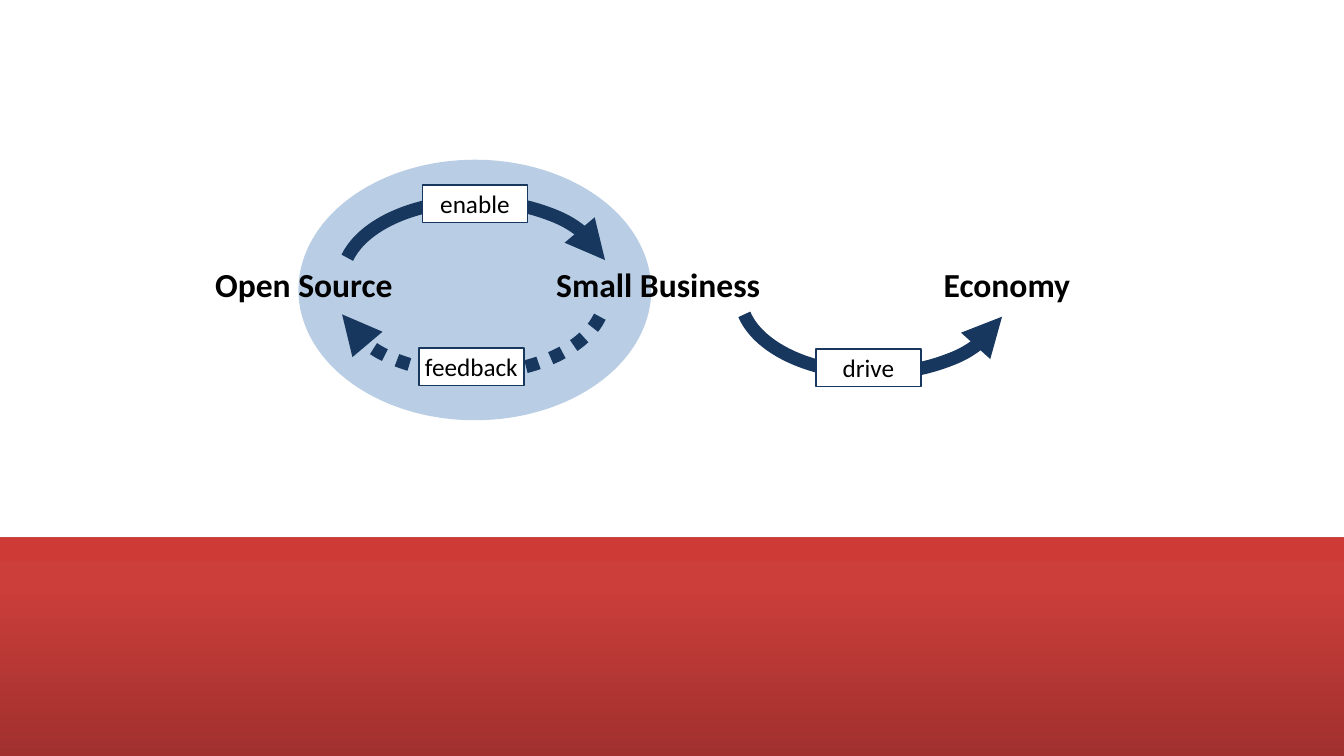
import copy
from dataclasses import dataclass
from typing import Optional

import pptx
import pptx.dml.color
import pptx.enum.dml
import pptx.enum.shapes
import pptx.enum.text
import pptx.oxml.ns
import pptx.oxml.xmlchemy
import pptx.util
from pptx.util import Cm

SHAPES = pptx.enum.shapes.MSO_SHAPE
ALIGN = pptx.enum.text.PP_ALIGN
NAVY, WHITE, BLACK = "17375E", "FFFFFF", "000000"
ARC_SIZE = (13.44, 7.85)
TAG_SIZE = (5.29, 1.9)


@dataclass
class Label:
    text: str
    left: float
    width: float
    align: ALIGN


@dataclass
class Flow:
    """A curved arrow with its tag; positions in centimetres."""
    text: str
    arc: tuple[float, float]
    tag: tuple[float, float]
    arrow_end: str = "tailEnd"
    rotation: float = 0
    dash: Optional[pptx.enum.dml.MSO_LINE] = None


LABELS = [
    Label("Open Source", 10.59, 13.34, ALIGN.LEFT),
    Label("Small Business", 26.19, 13.97, ALIGN.CENTER),
    Label("Economy", 43.76, 13.97, ALIGN.CENTER),
]
FLOWS = [
    Flow("enable", (17.25, 10.13), (21.29, 9.32)),
    Flow("drive", (37.31, 10.97), (41.12, 17.58), arrow_end="headEnd", rotation=180),
    Flow("feedback", (17.04, 10.97), (21.11, 17.53), rotation=180,
         dash=pptx.enum.dml.MSO_LINE.ROUND_DOT),
]
BAND_STOPS = [(0, "9C2F2D"), (0.8, "CB3E3A"), (1, "CE3B37")]


def colour(value: str) -> pptx.dml.color.RGBColor:
    return pptx.dml.color.RGBColor.from_string(value)


def add_shape(page, kind, left: float, top: float, width: float, height: float,
              fill: Optional[str] = None, line: Optional[str] = None, weight: float = 0):
    shape = page.shapes.add_shape(kind, Cm(left), Cm(top), Cm(width), Cm(height))
    shape.shadow.inherit = False
    if fill:
        shape.fill.solid()
        shape.fill.fore_color.rgb = colour(fill)
    else:
        shape.fill.background()
    if line:
        shape.line.color.rgb = colour(line)
        shape.line.width = pptx.util.Pt(weight)
    else:
        shape.line.fill.background()
    return shape


def write(box, text: str, *, size: float, bold: bool = False, align=ALIGN.CENTER) -> None:
    para = box.text_frame.paragraphs[0]
    para.alignment = align
    span = para.add_run()
    span.text = text
    span.font.name = "Calibri"
    span.font.size = pptx.util.Pt(size)
    span.font.bold = bold
    span.font.color.rgb = colour(BLACK)


def add_band(page) -> None:
    band = add_shape(page, SHAPES.RECTANGLE, -1.91, 27.09, 71.12, 11.85,
                     line="BF4C48", weight=0.75)
    band.fill.gradient()
    band.fill.gradient_angle = 90
    stop_list = band._element.spPr.find(".//" + pptx.oxml.ns.qn("a:gsLst"))
    stop_list.append(copy.deepcopy(stop_list[0]))
    for stop, (position, value) in zip(band.fill.gradient_stops, BAND_STOPS):
        stop.position = position
        stop.color.rgb = colour(value)


def add_label(page, label: Label) -> None:
    box = page.shapes.add_textbox(Cm(label.left), Cm(13.16), Cm(label.width), Cm(2.31))
    box.text_frame.word_wrap = True
    box.text_frame.auto_size = pptx.enum.text.MSO_AUTO_SIZE.SHAPE_TO_FIT_TEXT
    write(box, label.text, size=48, bold=True, align=label.align)


def add_flow(page, flow: Flow) -> None:
    arc = add_shape(page, SHAPES.ARC, *flow.arc, *ARC_SIZE, line=NAVY, weight=18.75)
    arc.adjustments[0] = 113.61
    arc.adjustments[1] = 211.04
    arc.rotation = flow.rotation
    if flow.dash:
        arc.line.dash_style = flow.dash
    outline = arc._element.spPr.find(pptx.oxml.ns.qn("a:ln"))
    arrow = pptx.oxml.xmlchemy.OxmlElement("a:" + flow.arrow_end)
    arrow.set("type", "triangle")
    outline.append(arrow)

    tag = add_shape(page, SHAPES.RECTANGLE, *flow.tag, *TAG_SIZE,
                    fill=WHITE, line=NAVY, weight=2)
    tag.text_frame.vertical_anchor = pptx.enum.text.MSO_ANCHOR.MIDDLE
    write(tag, flow.text, size=36)


def main() -> None:
    deck = pptx.Presentation()
    deck.slide_width, deck.slide_height = Cm(67.73), Cm(38.1)
    page = deck.slides.add_slide(deck.slide_layouts[6])

    # Backdrop
    add_shape(page, SHAPES.OVAL, 15.04, 8.05, 17.78, 13.13, fill="B9CDE5")
    add_band(page)

    # Actors
    for label in LABELS:
        add_label(page, label)

    # Relations between the actors
    for flow in FLOWS:
        add_flow(page, flow)

    deck.save("out.pptx")


if __name__ == "__main__":
    main()
